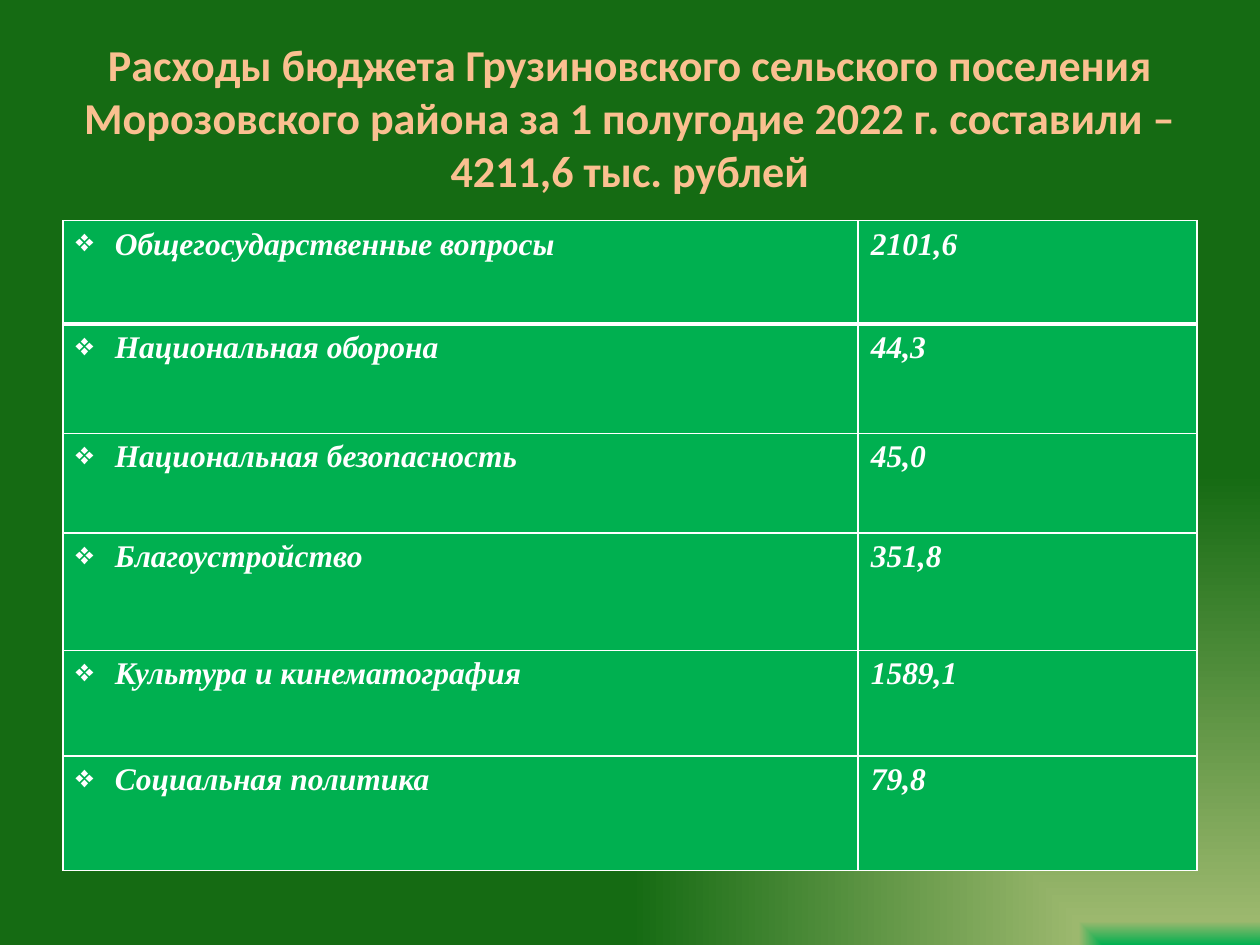
"""Build a slide with the spending table of a rural budget."""
import pptx
import pptx.dml.color
import pptx.enum.text
import pptx.oxml
import pptx.oxml.ns
import pptx.util
from dataclasses import dataclass

Cm, Pt = pptx.util.Cm, pptx.util.Pt

TITLE = ("Расходы бюджета Грузиновского сельского поселения "
         "Морозовского района за 1 полугодие 2022 г. составили – 4211,6 тыс. рублей")
ITEMS = [
    ("Общегосударственные вопросы", "2101,6", 2.08),
    ("Национальная оборона", "44,3", 2.21),
    ("Национальная безопасность", "45,0", 2.01),
    ("Благоустройство", "351,8", 2.36),
    ("Культура и кинематография", "1589,1", 2.13),
    ("Социальная политика", "79,8", 2.31),
]
COLS = (16.03, 6.83)
LEFT, WIDTH = 1.27, sum(COLS)


@dataclass(frozen=True)
class Theme:
    """Hold colours, fonts and sizes."""
    title: str = "FAC090"
    text: str = "FFFFFF"
    fill: str = "00B050"
    stops: tuple = ((0, "00B050"), (5, "9CB86E"), (100, "156B13"))
    head_font: str = "Calibri"
    body_font: str = "Times New Roman"
    head_size: float = 25.2
    body_size: float = 18
    thin: float = 1
    thick: float = 3
    indent: float = 0.79


THEME = Theme()


def node(text):
    """Parse a DrawingML element."""
    space = pptx.oxml.ns.nsdecls("a")
    return pptx.oxml.parse_xml(text.replace(" ", f" {space} ", 1))


def put(frame, text, *, size, font, color, italic=False, align=None, bullet=None):
    """Write one formatted paragraph."""
    para = frame.paragraphs[0]
    run = para.add_run()
    run.text = text
    run.font.size, run.font.name = Pt(size), font
    run.font.bold, run.font.italic = True, italic
    run.font.color.rgb = pptx.dml.color.RGBColor.from_string(color)
    if align is not None:
        para.alignment = align
    if bullet:
        props = para._p.get_or_add_pPr()
        props.set("marL", str(Cm(THEME.indent)))
        props.set("indent", str(-Cm(THEME.indent)))
        props.append(node(f'<a:buChar char="{bullet}" />'))


def edge(cell, widths):
    """Draw the left, right, top and bottom borders of a cell."""
    props = cell._tc.get_or_add_tcPr()
    for spot, (side, width) in enumerate(zip("LRTB", widths)):
        props.insert(spot, node(
            f'<a:ln{side} w="{Pt(width)}"><a:solidFill>'
            f'<a:srgbClr val="{THEME.text}"/></a:solidFill></a:ln{side}>'))


def paint(slide):
    """Set the corner gradient behind the slide."""
    fill = slide.background.fill
    fill.solid()
    stops = "".join(f'<a:gs pos="{pos * 1000}"><a:srgbClr val="{color}"/></a:gs>'
                    for pos, color in THEME.stops)
    grad = node(f'<a:gradFill rotWithShape="1"><a:gsLst>{stops}</a:gsLst>'
                '<a:path path="rect"><a:fillToRect l="100000" t="100000"/></a:path>'
                '<a:tileRect r="-100000" b="-100000"/></a:gradFill>')
    props = slide.element.cSld.bg.bgPr
    props.replace(props[0], grad)


def head(slide):
    """Place and fill the title."""
    title = slide.shapes.title
    title.left, title.top = Cm(LEFT), Cm(0.76)
    title.width, title.height = Cm(WIDTH), Cm(3.18)
    frame = title.text_frame
    frame.word_wrap = True
    frame.auto_size = pptx.enum.text.MSO_AUTO_SIZE.NONE
    frame.vertical_anchor = pptx.enum.text.MSO_ANCHOR.MIDDLE
    put(frame, TITLE, size=THEME.head_size, font=THEME.head_font,
        color=THEME.title, align=pptx.enum.text.PP_ALIGN.CENTER)


def grid(slide):
    """Add the spending table."""
    high = sum(item[2] for item in ITEMS)
    table = slide.shapes.add_table(len(ITEMS), len(COLS), Cm(LEFT), Cm(4.45),
                                   Cm(WIDTH), Cm(high)).table
    for col, width in zip(table.columns, COLS):
        col.width = Cm(width)
    for row, (name, value, height) in enumerate(ITEMS):
        table.rows[row].height = Cm(height)
        top = THEME.thick if row == 1 else THEME.thin
        base = THEME.thick if row == 0 else THEME.thin
        for col, (text, bullet) in enumerate(((name, "❖"), (value, None))):
            cell = table.cell(row, col)
            cell.fill.solid()
            cell.fill.fore_color.rgb = pptx.dml.color.RGBColor.from_string(THEME.fill)
            edge(cell, (THEME.thin, THEME.thin, top, base))
            put(cell.text_frame, text, size=THEME.body_size, font=THEME.body_font,
                color=THEME.text, italic=True, bullet=bullet)


def main():
    """Build and save the deck."""
    deck = pptx.Presentation()
    deck.slide_width, deck.slide_height = Cm(25.4), Cm(19.05)
    slide = deck.slides.add_slide(deck.slide_layouts[5])
    paint(slide)
    head(slide)
    grid(slide)
    deck.save("out.pptx")


if __name__ == "__main__":
    main()
